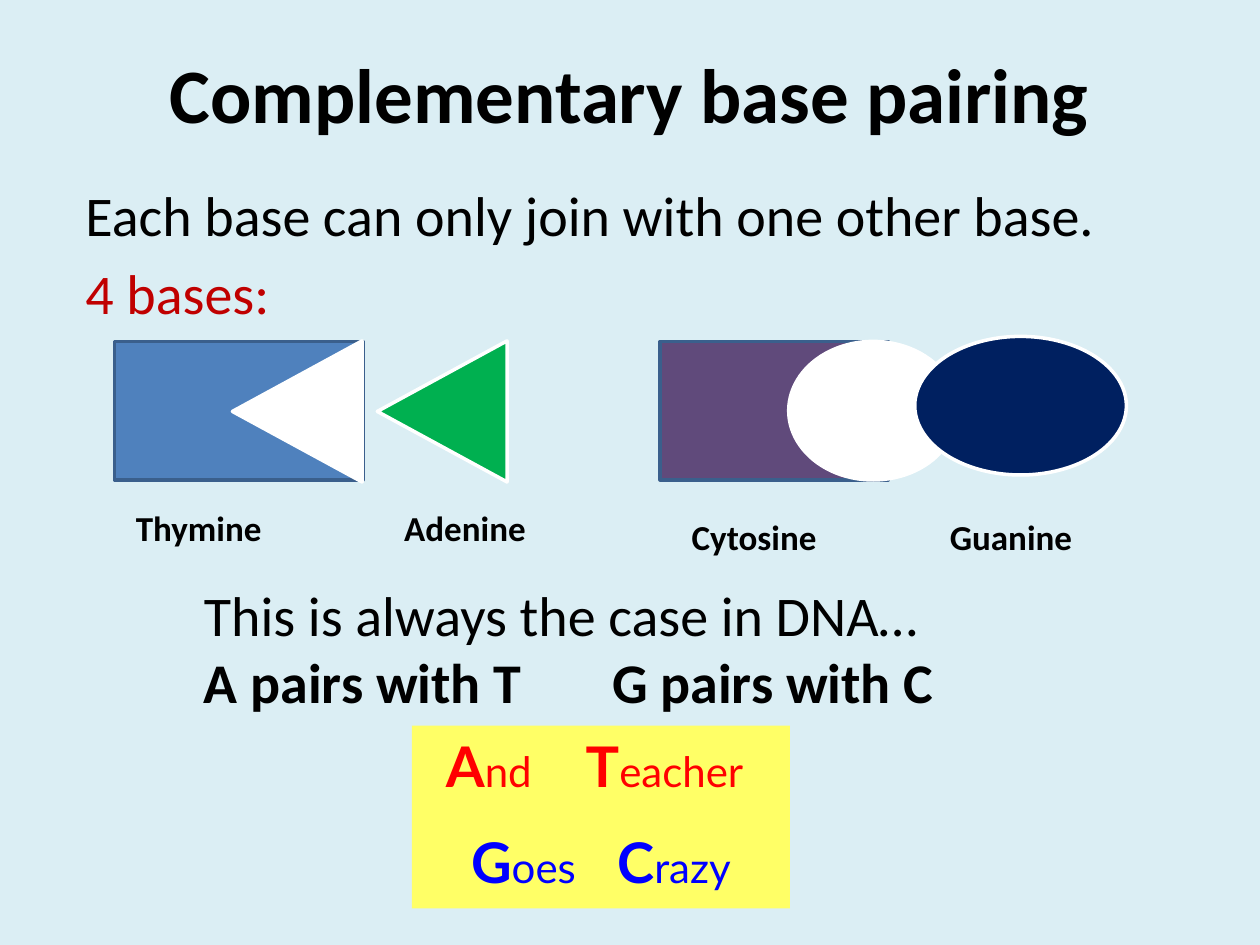
from pptx import Presentation
from pptx import util as u
from pptx.dml import color
from pptx.enum import shapes, text
from pptx.oxml import ns, xmlchemy

COLUMNS, ROWS = 100, 75
CELL = u.Inches(0.1)
BLACK, WHITE, RED, BLUE = "000000", "FFFFFF", "FF0000", "0000FF"
OUTLINE = "3A5F8C"
Kind = shapes.MSO_SHAPE


def rgb(value):
    return color.RGBColor.from_string(value)


def place(box):
    return [round(cells * CELL) for cells in box]


def add_run(paragraph, words, size, colour=BLACK, bold=False, font="Calibri"):
    run = paragraph.add_run()
    run.text = words
    run.font.name = font
    run.font.size = u.Pt(size)
    run.font.bold = bold
    run.font.color.rgb = rgb(colour)


def add_tabs(paragraph, stops):
    properties = paragraph._p.get_or_add_pPr()
    tabs = xmlchemy.OxmlElement("a:tabLst")
    properties.append(tabs)
    for stop in stops:
        tab = xmlchemy.OxmlElement("a:tab")
        tab.set("pos", str(round(stop * CELL)))
        tab.set("algn", "l")
        tabs.append(tab)


def add_text_box(slide, box):
    frame = slide.shapes.add_textbox(*place(box)).text_frame
    frame.word_wrap = True
    return frame


def add_figure(slide, kind, box, fill, line=None, rotation=0):
    shape = slide.shapes.add_shape(kind, *place(box))
    shape.shadow.inherit = False
    shape.rotation = rotation
    shape.fill.solid()
    shape.fill.fore_color.rgb = rgb(fill)
    if line:
        shape.line.color.rgb = rgb(line)
        shape.line.width = u.Pt(2)
    else:
        shape.line.fill.background()
    return shape


def add_title(slide, box):
    title = slide.shapes.title
    title.left, title.top, title.width, title.height = place(box)
    title.text_frame.vertical_anchor = text.MSO_ANCHOR.MIDDLE
    paragraph = title.text_frame.paragraphs[0]
    paragraph.alignment = text.PP_ALIGN.CENTER
    add_run(paragraph, "Complementary base pairing", 44, bold=True)


def add_introduction(slide, box):
    frame = add_text_box(slide, box)
    add_run(frame.paragraphs[0], "Each base can only join with one other base.", 32)
    paragraph = frame.add_paragraph()
    paragraph.space_before = u.Pt(6.4)
    add_run(paragraph, "4 bases:", 32, "C00000")


def add_base_pair(slide, box, block, kind, rotation, notch, partner, labels):
    left, top, width, height = box
    block_width, block_fill = block
    add_figure(slide, Kind.RECTANGLE, (left, top, block_width, height), block_fill, OUTLINE)
    for (x, y, w, h), fill in (notch, partner):
        add_figure(slide, kind, (left + x, top + y, w, h), fill, WHITE, rotation)
    for name, x, y in labels:
        frame = add_text_box(slide, (left + x, top + y, 13.4, 4.4))
        add_run(frame.paragraphs[0], name, 20, bold=True)


def add_rule(slide, box):
    frame = add_text_box(slide, box)
    add_run(frame.paragraphs[0], "This is always the case in DNA…", 32)
    paragraph = frame.add_paragraph()
    add_tabs(paragraph, [32.4])
    add_run(paragraph, "A pairs with T", 32, bold=True)
    add_run(paragraph, "\tG pairs with C", 32, bold=True)


def add_mnemonic(slide, box):
    frame = add_figure(slide, Kind.RECTANGLE, box, "FFFF66").text_frame
    frame.word_wrap = True
    frame.vertical_anchor = text.MSO_ANCHOR.TOP
    lines = [
        (RED, [1.7, 12.8], ["And", "Teacher"]),
        (BLUE, [3.7, 15.3], ["Goes", "Crazy"]),
    ]
    for index, (colour, stops, words) in enumerate(lines):
        paragraph = frame.add_paragraph() if index else frame.paragraphs[0]
        paragraph.alignment = text.PP_ALIGN.LEFT
        if index:
            paragraph.space_before = u.Pt(16)
        add_tabs(paragraph, stops)
        for word in words:
            add_run(paragraph, "\t" + word[0], 32, colour, True, "Lato")
            add_run(paragraph, word[1:], 24, colour, font="Lato")


def main():
    presentation = Presentation()
    presentation.slide_width = COLUMNS * CELL
    presentation.slide_height = ROWS * CELL
    slide = presentation.slides.add_slide(presentation.slide_layouts[5])
    slide.background.fill.solid()
    slide.background.fill.fore_color.rgb = rgb("DBEEF4")

    add_title(slide, (5, 1.1, 90, 12.5))
    add_introduction(slide, (5.8, 13.8, 90, 12.9))
    add_base_pair(
        slide, (9.1, 27.1, 31.6, 11), (19.7, "4F81BD"), Kind.ISOSCELES_TRIANGLE, 270,
        ((8.9, 0.4, 11.2, 10.3), WHITE), ((20.4, 0.4, 11.2, 10.3), "00B050"),
        [("Thymine", 0.7, 12.6), ("Adenine", 22, 12.6)],
    )
    add_base_pair(
        slide, (52.4, 27.1, 37, 11), (18.1, "604A7B"), Kind.OVAL, 0,
        ((10.2, 0, 13.4, 11), WHITE), ((20.2, -0.4, 16.8, 11), "002060"),
        [("Cytosine", 1.5, 13.3), ("Guanine", 22, 13.3)],
    )
    add_rule(slide, (15.2, 45.6, 65, 11.8))
    add_mnemonic(slide, (32.7, 57.6, 30, 14.5))
    presentation.save("out.pptx")


if __name__ == "__main__":
    main()
